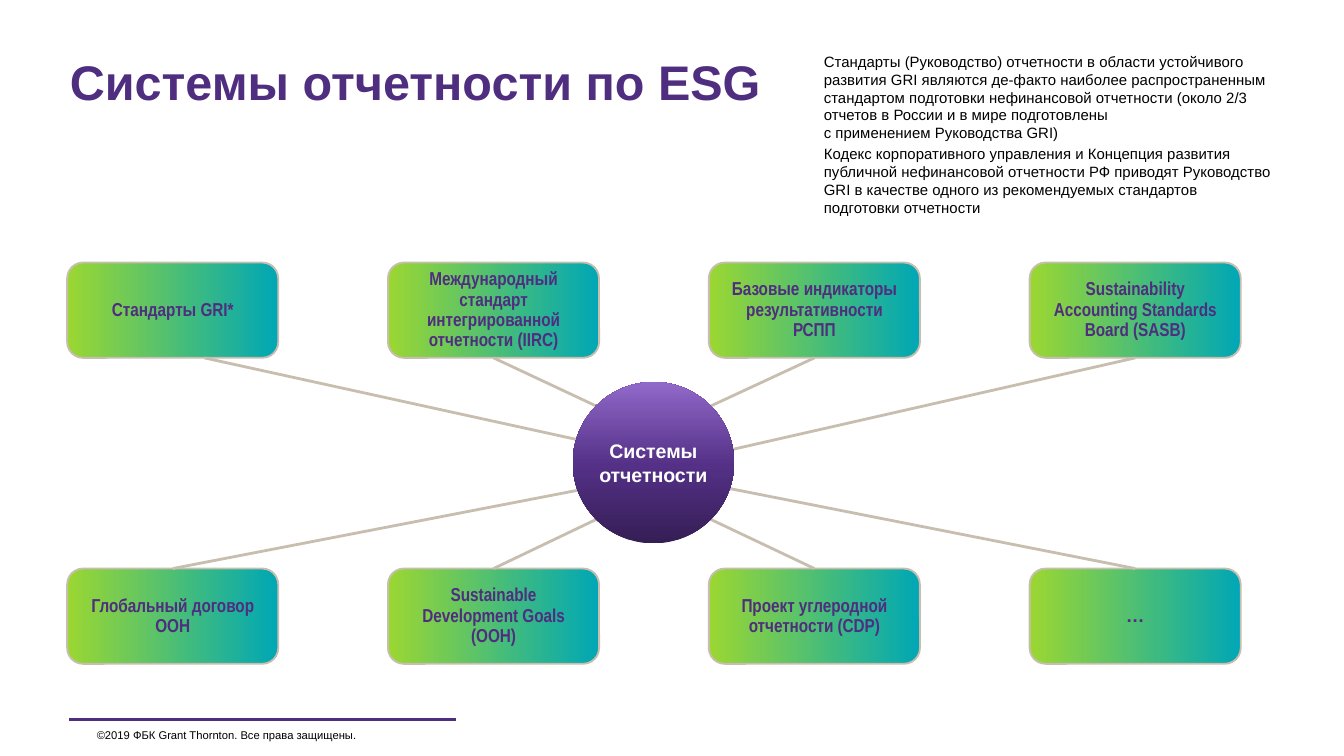
from lxml import etree
from pptx import Presentation
from pptx import util as u
from pptx.dml import color
from pptx.enum import shapes, text
from pptx.oxml import ns

PURPLE, BEIGE, BLACK, WHITE = "4F2D7F", "C8BEAF", "000000", "FFFFFF"
GREEN_TEAL = [(0, "9BD732"), (100, "00A7B5")]
VIOLETS = [(0, "351E55"), (48, "543086"), (100, "9169CA")]

# Each system: name, where its line leaves the box (share of the width),
# and where the line ends, measured from the centre of the hub
TOP_SYSTEMS = [
    ("Стандарты GRI*", 0.65, (-1.32, -0.41)),
    ("Международный стандарт интегрированной отчетности (IIRC)", 0.5, (-1.08, -1.07)),
    ("Базовые индикаторы результативности РСПП", 0.5, (1.08, -1.07)),
    ("Sustainability Accounting Standards Board (SASB)", 0.5, (1.4, -0.23)),
]
BOTTOM_SYSTEMS = [
    ("Глобальный договор ООН", 0.5, (-1.22, 0.48)),
    ("Sustainable Development Goals (ООН)", 0.5, (-1.08, 1.07)),
    ("Проект углеродной отчетности (CDP)", 0.5, (1.08, 1.07)),
    ("…", 0.5, (1.4, 0.48)),
]
NOTES = [
    "Стандарты (Руководство) отчетности в области устойчивого развития GRI "
    "являются де-факто наиболее распространенным стандартом подготовки "
    "нефинансовой отчетности (около 2/3 отчетов в России и в мире подготовлены\n"
    "с применением Руководства GRI)",
    "Кодекс корпоративного управления и Концепция развития публичной "
    "нефинансовой отчетности РФ приводят Руководство GRI в качестве одного "
    "из рекомендуемых стандартов подготовки отчетности",
]


def rgb(value):
    return color.RGBColor.from_string(value)


def write(shape, paragraphs, size, ink, font="Arial", bold=False, align="LEFT",
          anchor="TOP", inset=0, spacing=None, gap=0):
    frame = shape.text_frame
    frame.word_wrap = True
    frame.vertical_anchor = text.MSO_ANCHOR[anchor]
    frame.margin_left = frame.margin_right = u.Cm(inset)
    frame.margin_top = frame.margin_bottom = u.Cm(inset)
    for i, wording in enumerate(paragraphs):
        paragraph = frame.add_paragraph() if i else frame.paragraphs[0]
        paragraph.text = wording
        paragraph.alignment = text.PP_ALIGN[align]
        if spacing:
            paragraph.line_spacing = spacing
        if i:
            paragraph.space_before = u.Pt(gap)
        for run in paragraph.runs:
            run.font.size, run.font.name, run.font.bold = u.Pt(size), font, bold
            run.font.color.rgb = rgb(ink)


def add_text(slide, box, paragraphs, **style):
    write(slide.shapes.add_textbox(*map(u.Cm, box)), paragraphs, **style)


def add_line(slide, start, end, ink):
    line = slide.shapes.add_connector(
        shapes.MSO_CONNECTOR.STRAIGHT, *map(u.Cm, (*start, *end)))
    line.line.color.rgb = rgb(ink)
    line.line.width = u.Pt(1.5)
    etree.SubElement(line._element.spPr, ns.qn("a:effectLst"))


def add_gradient_shape(slide, kind, box, stops, angle):
    """Angle is in degrees, counter-clockwise from left-to-right."""
    shape = slide.shapes.add_shape(kind, *map(u.Cm, box))
    shape.shadow.inherit = False
    shape.fill.gradient()
    shape.fill.gradient_angle = angle
    stop_list = shape._element.spPr.find(".//" + ns.qn("a:gsLst"))
    for old_stop in list(stop_list):
        stop_list.remove(old_stop)
    for position, ink in stops:
        stop = etree.SubElement(stop_list, ns.qn("a:gs"), pos=str(position * 1000))
        etree.SubElement(stop, ns.qn("a:srgbClr"), val=ink)
    return shape


def add_system(slide, box, name):
    system = add_gradient_shape(
        slide, shapes.MSO_SHAPE.ROUNDED_RECTANGLE, box, GREEN_TEAL, 0)
    system.line.color.rgb = rgb(BEIGE)
    system.line.width = u.Pt(1)
    write(system, [name], size=10, ink=PURPLE, bold=True, align="CENTER",
          font="Arial" if name == "…" else "Arial Narrow",
          anchor="MIDDLE", inset=0.2, spacing=0.9)


def add_hub(slide, box):
    hub = add_gradient_shape(slide, shapes.MSO_SHAPE.OVAL, box, VIOLETS, 90)
    hub.line.fill.background()
    write(hub, ["Системы отчетности"], size=10.5, ink=WHITE, bold=True,
          align="CENTER", anchor="MIDDLE")


def add_diagram(slide, box):
    """Two rows of systems joined to a hub halfway between them."""
    left, top, width, height = box
    system_width, system_height, hub_size = 3.99, 1.8, 3.05
    pitch = (width - system_width) / (len(TOP_SYSTEMS) - 1)
    hub_x, hub_y = left + 11.08, top + height / 2 - 0.01
    rows = [(TOP_SYSTEMS, top, top + system_height),
            (BOTTOM_SYSTEMS, top + height - system_height,
             top + height - system_height)]
    for systems, row_top, exit_y in rows:
        for column, (name, exit_share, (dx, dy)) in enumerate(systems):
            x = left + column * pitch
            add_system(slide, (x, row_top, system_width, system_height), name)
            add_line(slide, (x + exit_share * system_width, exit_y),
                     (hub_x + dx, hub_y + dy), BEIGE)
    add_hub(slide, (hub_x - hub_size / 2, hub_y - hub_size / 2, hub_size, hub_size))


def add_header(slide, box):
    left, top, width, height = box
    add_text(slide, (left + 14.25, top, 8.51, height), NOTES,
             size=8, ink=BLACK, gap=1.6)
    add_text(slide, (left, top, width, 2.34), ["Системы отчетности по ESG"],
             size=26, ink=PURPLE, bold=True)


def add_footer(slide, box):
    left, top, width, height = box
    add_line(slide, (left, top), (left + width, top), PURPLE)
    add_text(slide, (left + 0.53, top + 0.03, width, height),
             ["©2019 ФБК Grant Thornton. Все права защищены."],
             size=6, ink=BLACK, anchor="MIDDLE")


def main():
    deck = Presentation()
    deck.slide_width, deck.slide_height = u.Cm(25.4), u.Cm(14.28)
    slide = deck.slides.add_slide(deck.slide_layouts[6])
    add_footer(slide, (1.3, 13.59, 7.31, 0.51))
    add_header(slide, (1.32, 0.99, 22.78, 3.35))
    add_diagram(slide, (1.27, 4.96, 22.18, 7.58))
    deck.save("out.pptx")


if __name__ == "__main__":
    main()
